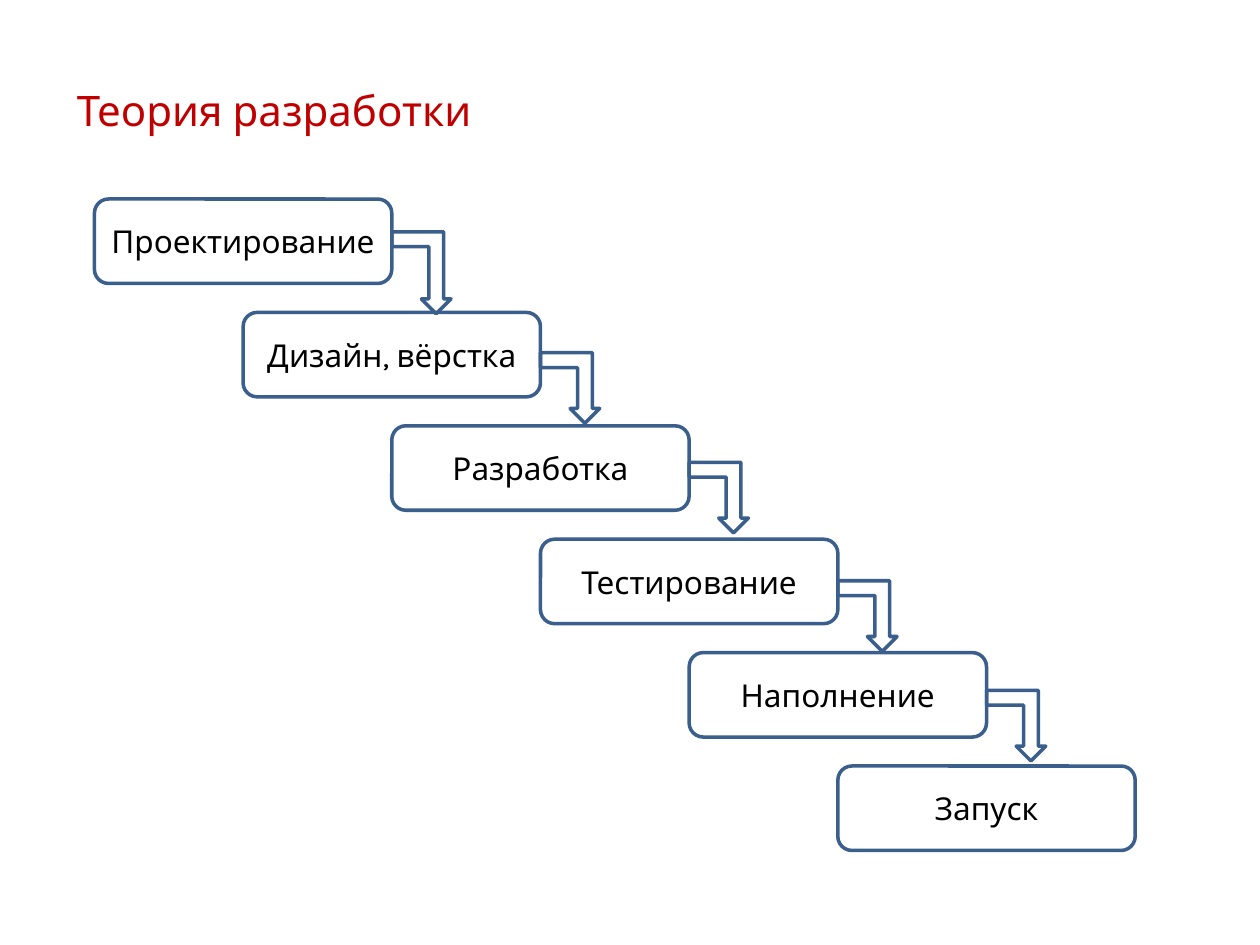
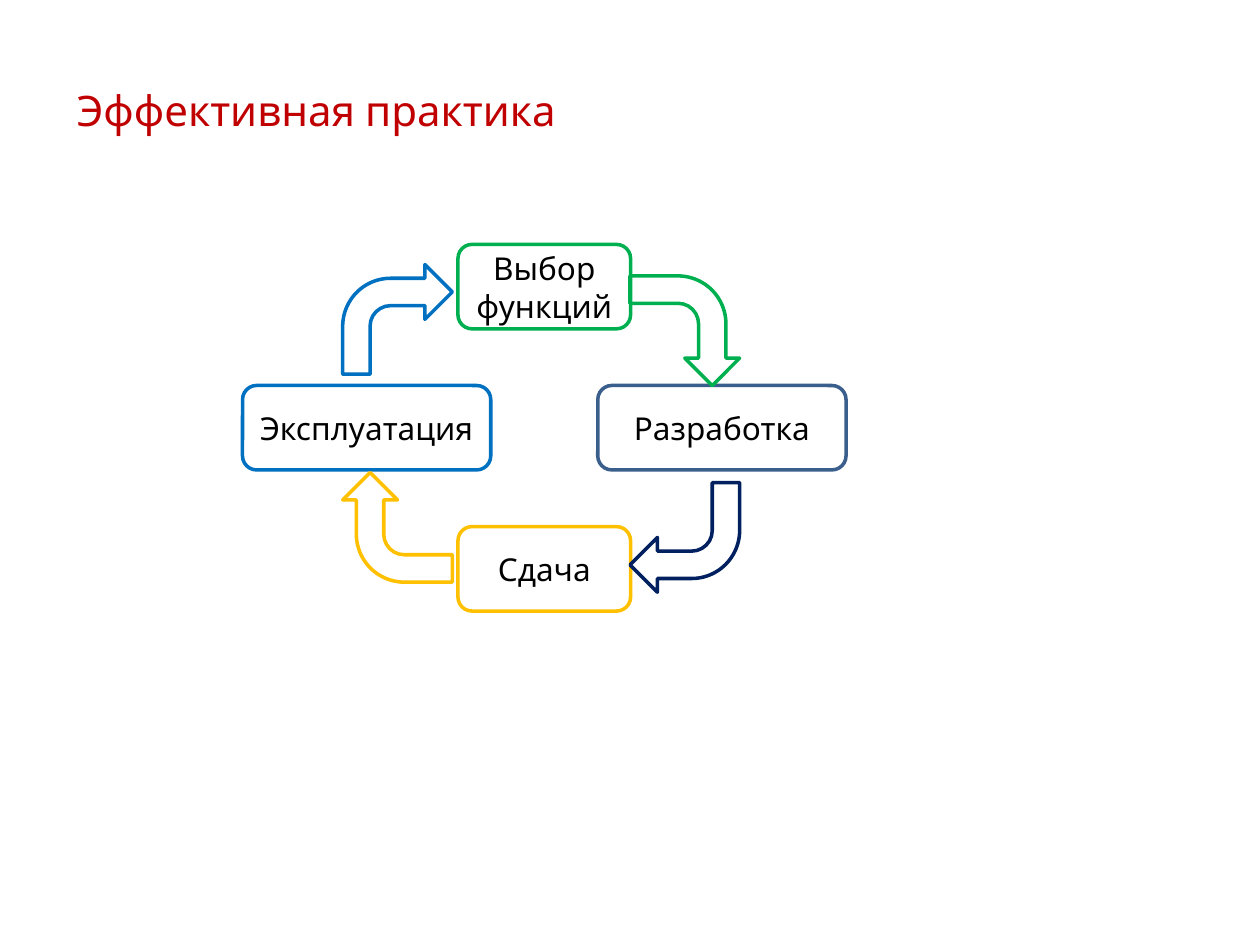
from dataclasses import dataclass

from pptx import Presentation
from pptx.dml.color import RGBColor
from pptx.enum.shapes import MSO_SHAPE as Preset
from pptx.enum.text import MSO_ANCHOR as Anchor, PP_ALIGN as Align
from pptx.shapes.autoshape import Shape
from pptx.slide import Slide
from pptx.text.text import TextFrame
from pptx.util import Inches, Pt

FONT = "Karla"
RED, BLACK = "C00000", "000000"
STEEL, GREEN, BLUE, NAVY, AMBER = "3A5F8C", "00B050", "0070C0", "002060", "FFC000"
BOX_HEIGHT = 0.67

# Staircase grid: every step moves half a box to the right and one row down.
STEP_WIDTH = 2.36
STAIR_LEFT, STAIR_TOP = 0.75, 1.58
STAIR_COLUMN, STAIR_ROW = STEP_WIDTH / 2, 0.9

# Cycle grid: columns are counted between box centres, rows between box tops.
CYCLE_CENTRE, CYCLE_TOP = 2.91, 1.94
CYCLE_COLUMN, CYCLE_ROW = 1.41, 1.12
WIDE, NARROW = 1.97, 1.37
TURN_SIZE = 0.87
TURN_LEFT, TURN_RIGHT = 2.72, 5.0


@dataclass(frozen=True)
class Step:
    label: str
    arrow_drop: float = 0
    arrow_height: float = 0.56


@dataclass(frozen=True)
class Stage:
    label: str
    column: int
    row: int
    width: float
    color: str


@dataclass(frozen=True)
class Turn:
    left: float
    top: float
    rotation: int
    color: str


STEPS = [
    Step("Проектирование", 0.26, 0.65),
    Step("Дизайн, вёрстка", 0.32),
    Step("Разработка", 0.29),
    Step("Тестирование", 0.33),
    Step("Наполнение", 0.3),
    Step("Запуск"),
]
STAGES = [
    Stage("Разработка", 2, 1, WIDE, STEEL),
    Stage("Сдача", 1, 2, NARROW, AMBER),
    Stage("Выбор функций", 1, 0, NARROW, GREEN),
    Stage("Эксплуатация", 0, 1, WIDE, BLUE),
]
TURNS = [
    Turn(TURN_RIGHT, 2.19, 90, GREEN),
    Turn(TURN_LEFT, 3.75, 270, AMBER),
    Turn(TURN_LEFT, 2.1, 0, BLUE),
    Turn(TURN_RIGHT, 3.83, 180, NAVY),
]


def paint(color: str) -> RGBColor:
    return RGBColor.from_string(color)


def write(frame: TextFrame, text: str, size: int, color: str, align: Align, anchor: Anchor) -> None:
    frame.text = text
    frame.word_wrap = True
    frame.vertical_anchor = anchor
    para = frame.paragraphs[0]
    para.alignment = align
    for span in para.runs:
        span.font.name = FONT
        span.font.size = Pt(size)
        span.font.color.rgb = paint(color)


def add_titled_page(deck: Presentation, title: str) -> Slide:
    page = deck.slides.add_slide(deck.slide_layouts[5])
    heading = page.shapes.title
    heading.left, heading.top = Inches(0.51), Inches(0.62)
    heading.width, heading.height = Inches(6.61), Inches(0.79)
    write(heading.text_frame, title, 24, RED, Align.LEFT, Anchor.TOP)
    return page


def add_outline(page: Slide, preset: Preset, left: float, top: float,
                width: float, height: float, color: str) -> Shape:
    shape = page.shapes.add_shape(
        preset, Inches(left), Inches(top), Inches(width), Inches(height))
    shape.shadow.inherit = False
    shape.fill.background()
    shape.line.color.rgb = paint(color)
    shape.line.width = Pt(2)
    return shape


def add_box(page: Slide, label: str, left: float, top: float, width: float, color: str) -> None:
    box = add_outline(page, Preset.ROUNDED_RECTANGLE, left, top, width, BOX_HEIGHT, color)
    frame = box.text_frame
    frame.margin_left = frame.margin_right = Inches(0.05)
    write(frame, label, 18, BLACK, Align.CENTER, Anchor.MIDDLE)


def build_staircase(deck: Presentation) -> None:
    page = add_titled_page(deck, "Теория разработки")
    corners = [(STAIR_LEFT + index * STAIR_COLUMN, STAIR_TOP + index * STAIR_ROW)
               for index in range(len(STEPS))]
    for step, (left, top) in zip(STEPS, corners):
        add_box(page, step.label, left, top, STEP_WIDTH, STEEL)
    for step, (left, top) in zip(STEPS[:-1], corners):
        arrow = add_outline(page, Preset.BENT_UP_ARROW, left + STEP_WIDTH,
                            top + step.arrow_drop, 0.47, step.arrow_height, STEEL)
        arrow._element.spPr.xfrm.set("flipV", "1")


def build_cycle(deck: Presentation) -> None:
    page = add_titled_page(deck, "Эффективная практика")
    for stage in STAGES:
        left = CYCLE_CENTRE + stage.column * CYCLE_COLUMN - stage.width / 2
        top = CYCLE_TOP + stage.row * CYCLE_ROW
        add_box(page, stage.label, left, top, stage.width, stage.color)
    for turn in TURNS:
        arrow = add_outline(page, Preset.BENT_ARROW, turn.left, turn.top,
                            TURN_SIZE, TURN_SIZE, turn.color)
        arrow.rotation = turn.rotation


def main() -> None:
    deck = Presentation()
    deck.slide_width, deck.slide_height = Inches(10), Inches(7.5)
    build_staircase(deck)
    build_cycle(deck)
    deck.save("out.pptx")


if __name__ == "__main__":
    main()
